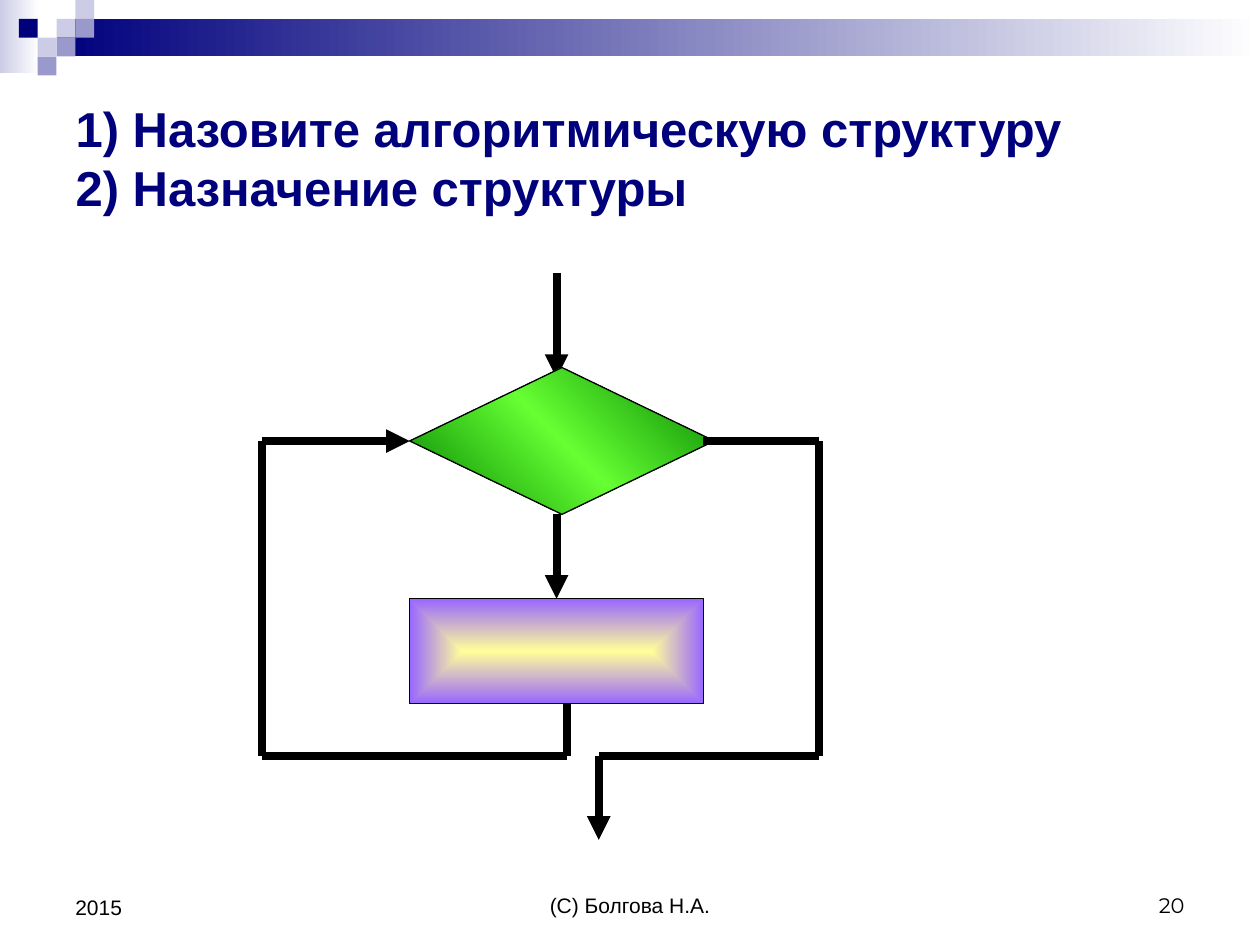
from lxml import etree
from pptx import Presentation
from pptx.dml.color import RGBColor
from pptx.enum import shapes as sh, text as tx
from pptx.oxml import ns
from pptx.util import Cm, Pt

HUES = {"navy": "00007D", "mid": "9999CC", "pale": "CCCCE6", "white": "FFFFFF",
        "black": "000000", "green": "008000", "lime": "66FF33",
        "cream": "FFFF99", "violet": "9966FF"}
UNIT = 0.38  # side of a corner square, cm
RECT = sh.MSO_SHAPE.RECTANGLE
ALIGN = tx.PP_ALIGN


def hue(name):
    return RGBColor.from_string(HUES[name])


def blend(shape, names, angle=None):
    """Gradient through evenly spaced colours; without an angle it runs from the centre out."""
    grad = etree.Element(ns.qn("a:gradFill"), rotWithShape="1")
    stops = etree.SubElement(grad, ns.qn("a:gsLst"))
    for i, name in enumerate(names):
        stop = etree.SubElement(stops, ns.qn("a:gs"), pos=str(100000 * i // (len(names) - 1)))
        etree.SubElement(stop, ns.qn("a:srgbClr"), val=HUES[name])
    if angle is None:
        way = etree.SubElement(grad, ns.qn("a:path"), path="shape")
        etree.SubElement(way, ns.qn("a:fillToRect"), l="50000", t="50000", r="50000", b="50000")
    else:
        etree.SubElement(grad, ns.qn("a:lin"), ang=str(angle * 60000), scaled="1")
    shape.element.spPr.find(ns.qn("a:prstGeom")).addnext(grad)


def block(slide, kind, box, fill, angle=None, edge=False):
    """Shape filled with one colour name, or with a gradient if given several."""
    shape = slide.shapes.add_shape(kind, *map(Cm, box))
    shape.shadow.inherit = False
    if isinstance(fill, str):
        shape.fill.solid()
        shape.fill.fore_color.rgb = hue(fill)
    else:
        blend(shape, fill, angle)
    if edge:
        shape.line.color.rgb = hue("black")
        shape.line.width = Pt(0.75)
    else:
        shape.line.fill.background()


def link(slide, start, end, arrow=False):
    line = slide.shapes.add_connector(sh.MSO_CONNECTOR.STRAIGHT, *map(Cm, start + end))
    line.line.color.rgb = hue("black")
    line.line.width = Pt(4.5)
    if arrow:
        etree.SubElement(line.line._get_or_add_ln(), ns.qn("a:tailEnd"), type="triangle")
    etree.SubElement(line.element.spPr, ns.qn("a:effectLst"))


def route(slide, *points, arrow=False):
    """Chain of straight lines, with an arrowhead on the last if asked."""
    last = len(points) - 2
    for i, (start, end) in enumerate(zip(points, points[1:])):
        link(slide, start, end, arrow and i == last)


def write(shape, words, size=12, font="Arial", color="black", bold=False,
          align=ALIGN.LEFT, anchor=tx.MSO_ANCHOR.BOTTOM):
    frame = shape.text_frame
    frame.word_wrap = True
    frame.auto_size = tx.MSO_AUTO_SIZE.NONE
    frame.vertical_anchor = anchor
    para = frame.paragraphs[0]
    para.text = words
    para.alignment = align
    for run in para.runs:
        run.font.size = Pt(size)
        run.font.name = font
        run.font.bold = bold
        run.font.color.rgb = hue(color)


def label(slide, box, words, **style):
    write(slide.shapes.add_textbox(*map(Cm, box)), words, **style)


def banner(slide):
    block(slide, RECT, (0, 0, 0.79, 1.47), ("pale", "white"), 0)
    block(slide, RECT, (3 * UNIT, UNIT, 25.4 - 3 * UNIT, 2 * UNIT), ("navy", "white"), 0)
    for col, row, fill in ((3, 1, "pale"), (4, 0, "pale"), (4, 1, "mid"), (2, 2, "pale"),
                           (1, 1, "navy"), (3, 2, "mid"), (2, 3, "mid")):
        block(slide, RECT, (col * UNIT, row * UNIT, UNIT, UNIT), fill)


def head(slide):
    title = slide.shapes.title
    title.left, title.top, title.width, title.height = map(Cm, (1.27, 1.27, 22.86, 3.81))
    write(title, "1) Назовите алгоритмическую структуру\v2) Назначение структуры",
          size=28, color="navy", bold=True, anchor=tx.MSO_ANCHOR.MIDDLE)


def foot(slide):
    label(slide, (8.68, 17.35, 8.04, 1.27), "(С) Болгова Н.А.", align=ALIGN.CENTER)
    label(slide, (18.2, 17.35, 5.93, 1.27), "20", font="Montserrat", align=ALIGN.RIGHT)
    label(slide, (1.27, 17.35, 5.93, 1.32), "2015")


def chart(slide):
    """Flowchart of a loop with its test first."""
    mid, left, right = 11.22, 5.29, 16.51
    test, base = 8.89, 15.24
    back, out = 11.43, 12.07
    edge, far = 8.26, 14.18
    route(slide, (mid, 5.5), (mid, 7.62), arrow=True)
    block(slide, sh.MSO_SHAPE.DIAMOND, (edge, 7.41, 6.14, 2.96),
          ("green", "lime", "green"), 315, edge=True)
    route(slide, (mid, 10.37), (mid, 12.07), arrow=True)
    block(slide, RECT, (edge, 12.07, 5.93, 2.12), ("cream", "violet"), edge=True)
    route(slide, (back, 14.18), (back, base), (left, base), (left, test),
          (edge, test), arrow=True)
    route(slide, (far, test), (right, test), (right, base), (out, base),
          (out, 16.93), arrow=True)


def main():
    deck = Presentation()
    deck.slide_width, deck.slide_height = Cm(25.4), Cm(19.05)
    slide = deck.slides.add_slide(deck.slide_layouts[5])
    banner(slide)
    foot(slide)
    head(slide)
    chart(slide)
    deck.save("out.pptx")


if __name__ == "__main__":
    main()
